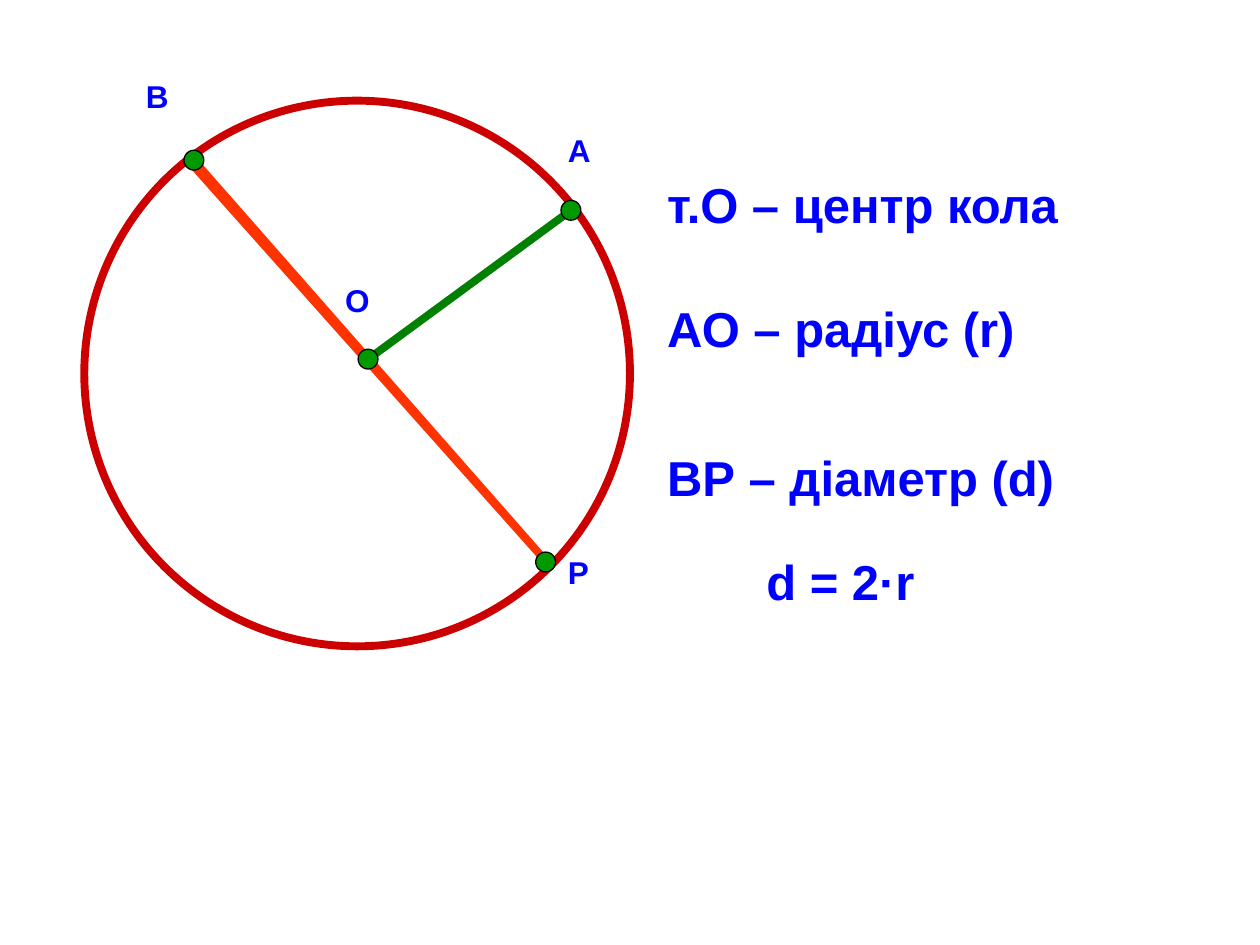
from dataclasses import dataclass

from lxml import etree
from pptx import Presentation
from pptx.dml.color import RGBColor
from pptx.enum.shapes import MSO_CONNECTOR, MSO_SHAPE
from pptx.oxml.ns import qn
from pptx.util import Cm, Pt

OVAL = MSO_SHAPE.OVAL
STRAIGHT = MSO_CONNECTOR.STRAIGHT


@dataclass(frozen=True)
class Theme:
    font: str = "Arial"
    ink: str = "0000FF"
    ring: str = "CC0000"
    chord: str = "FF3300"
    ray: str = "008000"
    dot: str = "009900"
    edge: str = "000000"
    small: float = 18
    large: float = 28
    thick: float = 4.5
    thin: float = 0.75


THEME = Theme()


def set_line(line, color, width):
    line.color.rgb = RGBColor.from_string(color)
    line.width = Pt(width)


def add_oval(slide, left, top, size, color, width, fill=None):
    oval = slide.shapes.add_shape(OVAL, Cm(left), Cm(top), Cm(size), Cm(size))
    oval.shadow.inherit = False
    if fill:
        oval.fill.solid()
        oval.fill.fore_color.rgb = RGBColor.from_string(fill)
    else:
        oval.fill.background()
    set_line(oval.line, color, width)


def add_text(slide, text, left, top, width, height, size):
    box = slide.shapes.add_textbox(Cm(left), Cm(top), Cm(width), Cm(height))
    frame = box.text_frame
    frame.word_wrap = True
    run = frame.paragraphs[0].add_run()
    run.text = text
    style = {"name": THEME.font, "size": Pt(size), "bold": True}
    for key, value in style.items():
        setattr(run.font, key, value)
    run.font.color.rgb = RGBColor.from_string(THEME.ink)


def draw_circle(slide, left, top, size):
    """Circle with its centre, radius and diameter, in a square box."""
    # Each point: centre of its dot, then corner of its label
    points = {
        "O": ((5.72, 5.21), (5.01, 3.51)),
        "А": ((9.81, 2.21), (9.5, 0.48)),
        "В": ((2.21, 1.2), (0.99, -0.61)),
        "Р": ((9.3, 9.3), (9.5, 8.99)),
    }

    def place(spot):
        return Cm(left + spot[0]), Cm(top + spot[1])

    # Diameter: a sliver that narrows towards the lower end
    wedge = [place(spot) for spot in ((2.19, 1.3), (2.16, 1.15), (9.32, 9.3))]
    maker = slide.shapes.build_freeform(*wedge[0])
    maker.add_line_segments(wedge[1:], close=True)
    chord = maker.convert_to_shape()
    chord.shadow.inherit = False
    chord.fill.background()
    set_line(chord.line, THEME.chord, THEME.thick)

    # Radius
    ray = slide.shapes.add_connector(
        STRAIGHT, *place(points["O"][0]), *place(points["А"][0]))
    set_line(ray.line, THEME.ray, THEME.thick)
    etree.SubElement(ray._element.spPr, qn("a:effectLst"))

    # Circle, then the marked points
    add_oval(slide, left, top, size, THEME.ring, THEME.thick)
    dot = 0.4
    for name, ((x, y), (across, down)) in points.items():
        add_oval(slide, left + x - dot / 2, top + y - dot / 2, dot,
                 THEME.edge, THEME.thin, THEME.dot)
        add_text(slide, name, left + across, top + down, 1.5, 1.6, THEME.small)


def write_notes(slide, left, top, width):
    """Definitions beside the circle, with the formula indented."""
    notes = (
        ("т.О – центр кола", 0, 0),
        ("АО – радіус (r)", 0, 2.5),
        ("ВР – діаметр (d)", 0, 5.5),
        ("d = 2·r", 2, 7.6),
    )
    for text, inset, down in notes:
        add_text(slide, text, left + inset, top + down, width - inset, 1.45,
                 THEME.large)


def main():
    deck = Presentation()
    deck.slide_width, deck.slide_height = Cm(25.4), Cm(19.05)
    slide = deck.slides.add_slide(deck.slide_layouts[6])
    draw_circle(slide, 1.7, 2.03, 11)
    write_notes(slide, 13.2, 3.4, 10.7)
    deck.save("out.pptx")


if __name__ == "__main__":
    main()
